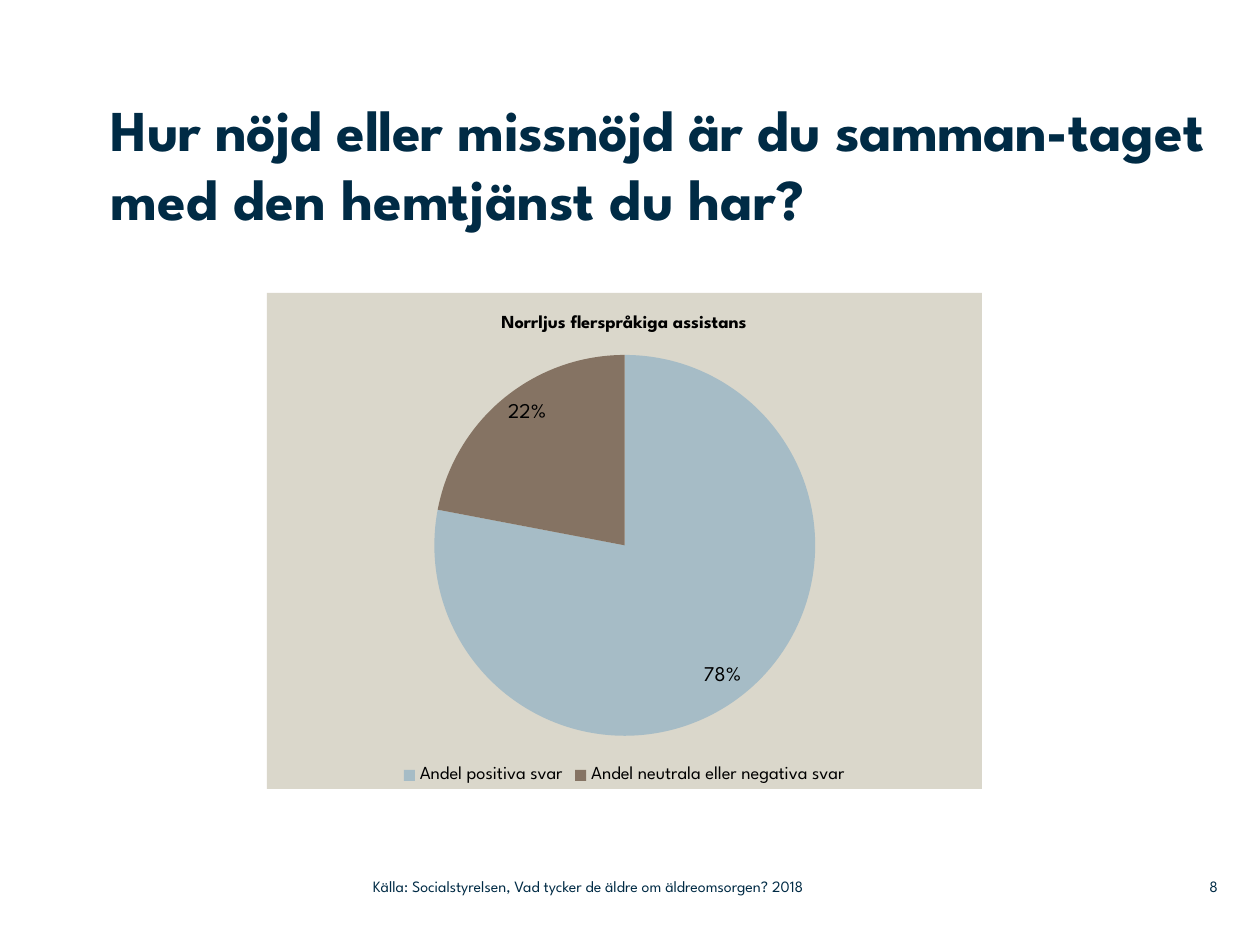
from dataclasses import dataclass

from lxml import etree
from pptx import Presentation
from pptx.chart.data import CategoryChartData
from pptx.dml.color import RGBColor
from pptx.enum.chart import XL_CHART_TYPE, XL_LABEL_POSITION, XL_LEGEND_POSITION
from pptx.enum.text import MSO_ANCHOR, PP_ALIGN
from pptx.oxml.ns import qn
from pptx.util import Emu, Pt

PX = 914400 // 126
FONT = "League Spartan"
NAVY = RGBColor(0x00, 0x2B, 0x45)
BLACK = RGBColor(0x00, 0x00, 0x00)
SAND = RGBColor(0xDA, 0xD7, 0xCB)
BLUE = RGBColor(0xA6, 0xBC, 0xC6)
BROWN = RGBColor(0x85, 0x73, 0x63)
PIE = XL_CHART_TYPE.PIE
INSIDE_END = XL_LABEL_POSITION.INSIDE_END
LEGEND_BOTTOM = XL_LEGEND_POSITION.BOTTOM
TOP, MIDDLE = MSO_ANCHOR.TOP, MSO_ANCHOR.MIDDLE
LEFT, RIGHT = PP_ALIGN.LEFT, PP_ALIGN.RIGHT


@dataclass(frozen=True)
class Area:
    left: int
    top: int
    width: int
    height: int

    def emu(self) -> tuple[Emu, ...]:
        return tuple(Emu(side * PX) for side in (self.left, self.top, self.width, self.height))


@dataclass(frozen=True)
class Slice:
    label: str
    percent: int
    color: RGBColor


CHART_AREA = Area(267, 293, 715, 496)
PIE_AREA = Area(434, 355, 381, 381)
SLICES = (
    Slice("Andel positiva svar", 78, BLUE),
    Slice("Andel neutrala eller negativa svar", 22, BROWN),
)


def set_font(font, size: float, color: RGBColor, bold: bool = False) -> None:
    font.name, font.size, font.bold = FONT, Pt(size), bold
    font.color.rgb = color


def add_text(slide, area: Area, *texts: str, size: float = 9, bold: bool = False,
             align=LEFT, anchor=MIDDLE, first_spacing: int = 0) -> None:
    """Place the texts as spans of one paragraph; first_spacing is in 1/100 pt."""
    frame = slide.shapes.add_textbox(*area.emu()).text_frame
    frame.word_wrap = True
    frame.vertical_anchor = anchor
    frame.margin_left = frame.margin_top = frame.margin_right = frame.margin_bottom = 0
    para = frame.paragraphs[0]
    para.alignment = align
    for text in texts:
        span = para.add_run()
        span.text = text
        set_font(span.font, size, NAVY, bold)
    if first_spacing:
        para.runs[0].font._element.set("spc", str(first_spacing))


def place_plot(chart, outer: Area, inner: Area) -> None:
    """Fix the plot area at inner, as fractions of the chart area outer."""
    plot_area = chart._chartSpace.chart.plotArea
    for old in plot_area.findall(qn("c:layout")):
        plot_area.remove(old)
    layout = etree.Element(qn("c:layout"))
    manual = etree.SubElement(layout, qn("c:manualLayout"))
    settings = {
        "layoutTarget": "inner",
        "xMode": "edge",
        "yMode": "edge",
        "x": round((inner.left - outer.left) / outer.width, 3),
        "y": round((inner.top - outer.top) / outer.height, 3),
        "w": round(inner.width / outer.width, 3),
        "h": round(inner.height / outer.height, 3),
    }
    for name, value in settings.items():
        etree.SubElement(manual, qn(f"c:{name}")).set("val", str(value))
    plot_area.insert(0, layout)


def fill_chart(chart, color: RGBColor) -> None:
    """Give the whole chart a plain background without outline."""
    properties = etree.Element(qn("c:spPr"))
    solid = etree.SubElement(properties, qn("a:solidFill"))
    etree.SubElement(solid, qn("a:srgbClr")).set("val", str(color))
    line = etree.SubElement(properties, qn("a:ln"))
    etree.SubElement(line, qn("a:noFill"))
    chart._chartSpace.chart.addnext(properties)


def add_pie(slide, title: str) -> None:
    data = CategoryChartData()
    data.categories = [part.label for part in SLICES]
    data.add_series("Andel svar", [part.percent for part in SLICES])
    chart = slide.shapes.add_chart(PIE, *CHART_AREA.emu(), data).chart
    set_font(chart.font, 18, BLACK)
    fill_chart(chart, SAND)
    place_plot(chart, CHART_AREA, PIE_AREA)

    chart.has_title = True
    title_frame = chart.chart_title.text_frame
    title_frame.text = title
    set_font(title_frame.paragraphs[0].runs[0].font, 10.5, BLACK, bold=True)

    chart.has_legend = True
    chart.legend.position = LEGEND_BOTTOM
    chart.legend.include_in_layout = False
    set_font(chart.legend.font, 10.5, BLACK)

    plot = chart.plots[0]
    plot.vary_by_categories = True
    for index, part in enumerate(SLICES):
        fill = plot.series[0].points[index].format.fill
        fill.solid()
        fill.fore_color.rgb = part.color
    plot.has_data_labels = True
    labels = plot.data_labels
    labels.show_percentage, labels.show_value = True, False
    labels.number_format, labels.number_format_is_linked = "0%", False
    labels.position = INSIDE_END
    set_font(labels.font, 12, BLACK)


def main() -> None:
    deck = Presentation()
    deck.slide_width, deck.slide_height = Emu(1260 * PX), Emu(945 * PX)
    page = deck.slides.add_slide(deck.slide_layouts[6])
    add_text(page, Area(1159, 868, 59, 37), "8", align=RIGHT)
    add_text(page, Area(373, 868, 558, 37),
             "Källa: Socialstyrelsen, Vad tycker de äldre om äldreomsorgen? 2018")
    add_text(page, Area(111, 94, 1126, 179), "Hur nöjd eller missnöjd är du samman-",
             "taget med den hemtjänst du har?", size=33, bold=True, anchor=TOP,
             first_spacing=-30)
    add_pie(page, "Norrljus flerspråkiga assistans")
    deck.save("out.pptx")


if __name__ == "__main__":
    main()
